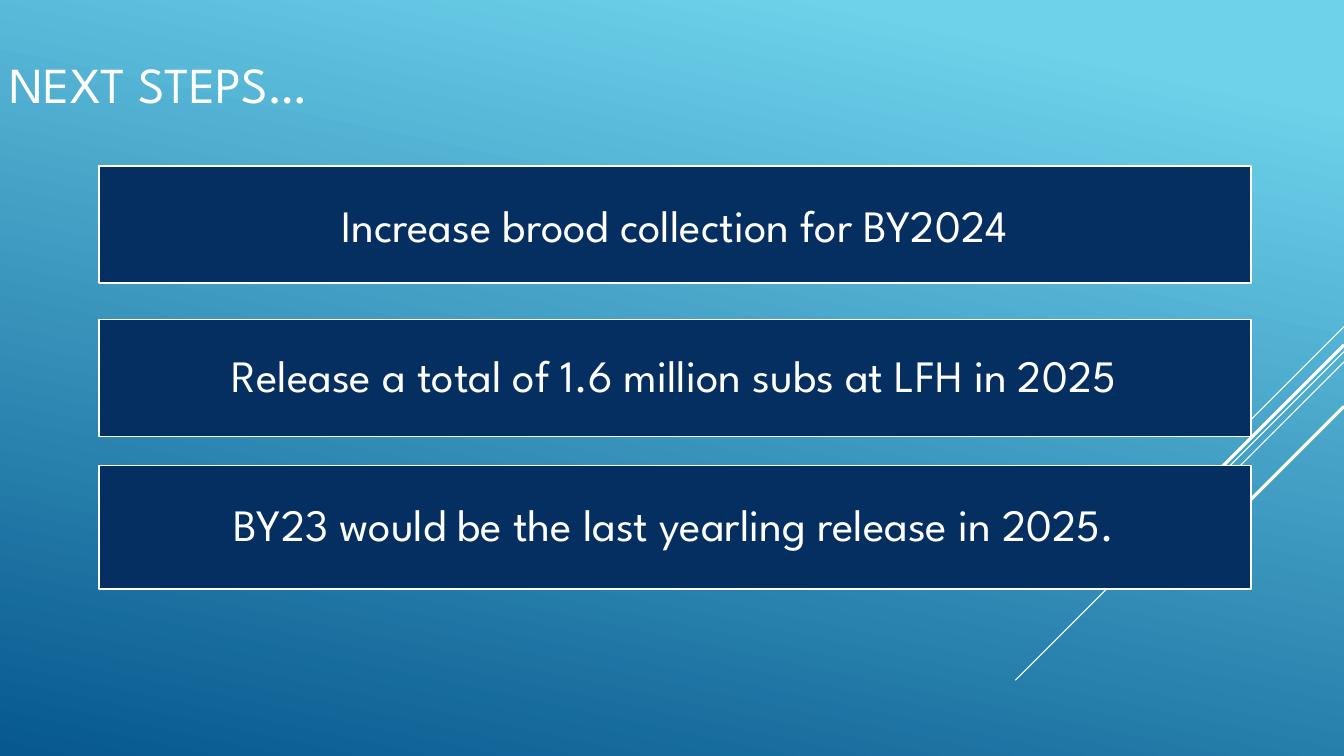
from dataclasses import dataclass

from lxml.etree import SubElement
from pptx import Presentation
from pptx.dml.color import RGBColor as RGB
from pptx.enum.shapes import MSO_CONNECTOR as CONNECTOR, MSO_SHAPE as SHAPE
from pptx.enum.text import MSO_ANCHOR as ANCHOR, PP_ALIGN as ALIGN
from pptx.oxml.ns import qn
from pptx.util import Cm, Pt


@dataclass(frozen=True)
class Theme:
    font: str = "League Spartan"
    sky: RGB = RGB(0x6E, 0xD2, 0xEB)
    deep: RGB = RGB(0x06, 0x58, 0x8E)
    navy: RGB = RGB(0x05, 0x2F, 0x61)
    white: RGB = RGB(0xFF, 0xFF, 0xFF)
    title: Pt = Pt(36)
    step: Pt = Pt(32)
    border: Pt = Pt(1.25)


THEME = Theme()
WIDTH, HEIGHT = 33.87, 19.05

# Each ray starts on the right edge: top (cm), run (cm), weight (pt)
RAYS = [
    (8.23, 2.54, 0.75),
    (8.86, 8.28, 0.75),
    (9.12, 5.26, 0.75),
    (8.69, 4.85, 2.25),
    (10.24, 3.53, 2.25),
]

# Each step: text, top (cm), height (cm), line spacing
STEPS = [
    ("Increase brood collection for BY2024", 4.19, 2.95, 1.0),
    ("Release a total of 1.6 million subs at LFH in 2025", 8.05, 2.95, 0.9),
    ("BY23 would be the last yearling release in 2025.", 11.73, 3.12, 0.9),
]


def paint_background(slide):
    fill = slide.background.fill
    fill.gradient()
    fill.gradient_angle = 258
    stops = ((0.1, THEME.sky), (1.0, THEME.deep))
    for stop, (position, color) in zip(fill.gradient_stops, stops):
        stop.position = position
        stop.color.rgb = color


def add_rays(slide, right):
    """Draw the 45-degree lines running down and left from the right edge."""
    for top, run, weight in RAYS:
        ray = slide.shapes.add_connector(
            CONNECTOR.STRAIGHT, Cm(right), Cm(top), Cm(right - run), Cm(top + run))
        ray.line.color.rgb = THEME.white
        ray.line.width = Pt(weight)
        SubElement(ray._element.spPr, qn("a:effectLst"))


def write(tf, text, size):
    """Put one line of white text in the middle of a frame."""
    tf.word_wrap = True
    tf.vertical_anchor = ANCHOR.MIDDLE
    p = tf.paragraphs[0]
    p.text = text
    font = p.runs[0].font
    font.name, font.size, font.color.rgb = THEME.font, size, THEME.white
    return p


def add_title(slide, left, top, width, height):
    sp = slide.shapes.add_textbox(Cm(left), Cm(top), Cm(width), Cm(height))
    write(sp.text_frame, "NEXT STEPS…", THEME.title)


def add_steps(slide, left, width):
    for text, top, height, spacing in STEPS:
        sp = slide.shapes.add_shape(
            SHAPE.RECTANGLE, Cm(left), Cm(top), Cm(width), Cm(height))
        sp.shadow.inherit = False
        sp.fill.solid()
        sp.fill.fore_color.rgb = THEME.navy
        sp.line.color.rgb = THEME.white
        sp.line.width = THEME.border
        tf = sp.text_frame
        tf.margin_left = tf.margin_right = Cm(0.33)
        tf.margin_top = tf.margin_bottom = Cm(0.33)
        p = write(tf, text, THEME.step)
        p.alignment = ALIGN.CENTER
        p.line_spacing = spacing


def main():
    prs = Presentation()
    prs.slide_width, prs.slide_height = Cm(WIDTH), Cm(HEIGHT)
    slide = prs.slides.add_slide(prs.slide_layouts[6])
    paint_background(slide)
    add_rays(slide, WIDTH)
    add_title(slide, 0, 0, 23.7, 4.19)
    add_steps(slide, 2.49, 29.03)
    prs.save("out.pptx")


if __name__ == "__main__":
    main()
